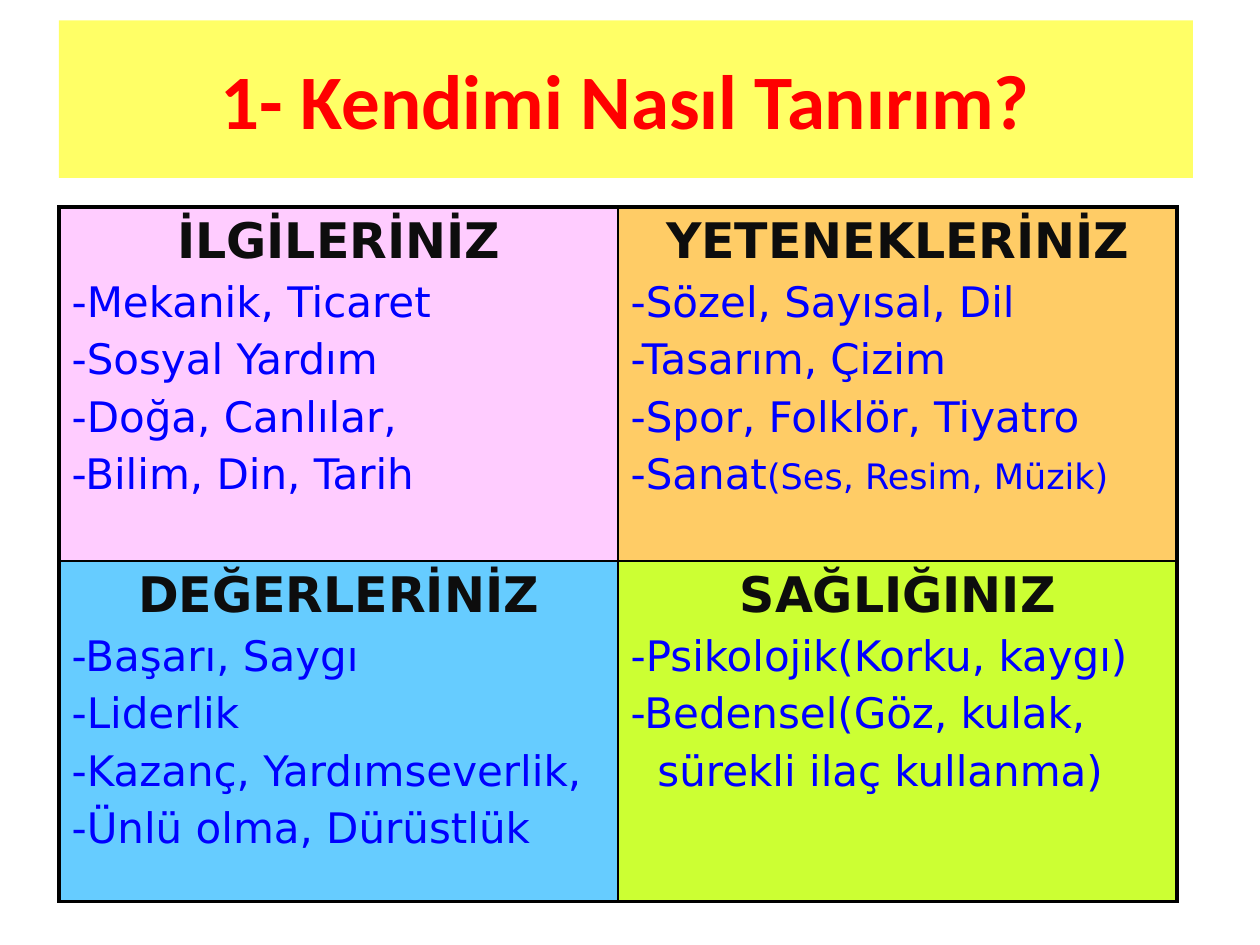
from lxml import etree
from pptx import Presentation
from pptx import util as u
from pptx.dml.color import RGBColor
from pptx.enum import shapes, text
from pptx.oxml.ns import qn

YELLOW = RGBColor(0xFF, 0xFF, 0x66)
RED = RGBColor(0xFF, 0x00, 0x00)
INK = RGBColor(0x0D, 0x0D, 0x0D)
BLUE = RGBColor(0x00, 0x00, 0xFF)
BLACK = RGBColor(0x00, 0x00, 0x00)
PINK = RGBColor(0xFF, 0xCC, 0xFF)
ORANGE = RGBColor(0xFF, 0xCC, 0x66)
SKY = RGBColor(0x66, 0xCC, 0xFF)
LIME = RGBColor(0xCC, 0xFF, 0x33)

LEFT = u.Cm(1.19)
OUTER, INNER = 2.25, 1
HANGING = "sürekli ilaç kullanma)"

TOPICS = [
    [
        ("İLGİLERİNİZ", PINK,
         ["-Mekanik, Ticaret", "-Sosyal Yardım", "-Doğa, Canlılar,", "-Bilim, Din, Tarih"]),
        ("YETENEKLERİNİZ", ORANGE,
         ["-Sözel, Sayısal, Dil", "-Tasarım, Çizim", "-Spor, Folklör, Tiyatro", "-Sanat"]),
    ],
    [
        ("DEĞERLERİNİZ", SKY,
         ["-Başarı, Saygı", "-Liderlik", "-Kazanç, Yardımseverlik,", "-Ünlü olma, Dürüstlük"]),
        ("SAĞLIĞINIZ", LIME,
         ["-Psikolojik(Korku, kaygı)", "-Bedensel(Göz, kulak,", HANGING]),
    ],
]
DETAILS = {"-Sanat": "(Ses, Resim, Müzik)"}


def add_run(p, content, size=24, color=BLUE, bold=False, font="DejaVu Sans"):
    r = p.add_run()
    r.text = content
    r.font.size = u.Pt(size)
    r.font.name = font
    r.font.bold = bold
    r.font.color.rgb = color


def add_title(s):
    sp = s.shapes.add_shape(shapes.MSO_SHAPE.RECTANGLE, LEFT, u.Cm(0.41), u.Cm(22.86), u.Cm(3.18))
    sp.shadow.inherit = False
    sp.fill.solid()
    sp.fill.fore_color.rgb = YELLOW
    sp.line.fill.background()
    tf = sp.text_frame
    tf.word_wrap = True
    tf.vertical_anchor = text.MSO_ANCHOR.MIDDLE
    p = tf.paragraphs[0]
    p.alignment = text.PP_ALIGN.CENTER
    add_run(p, "1- Kendimi Nasıl Tanırım?", size=44, color=RED, bold=True, font="Calibri")


def set_border(cell, side, width):
    tcPr = cell._tc.get_or_add_tcPr()
    ln = etree.SubElement(tcPr, qn(f"a:ln{side}"), w=str(u.Pt(width)))
    fill = etree.SubElement(ln, qn("a:solidFill"))
    etree.SubElement(fill, qn("a:srgbClr"), val=str(BLACK))


def fill_cell(cell, heading, color, items):
    cell.fill.solid()
    cell.fill.fore_color.rgb = color
    tf = cell.text_frame
    p = tf.paragraphs[0]
    p.alignment = text.PP_ALIGN.CENTER
    add_run(p, heading, size=28, color=INK, bold=True)
    for item in items:
        p = tf.add_paragraph()
        p.space_before = u.Pt(4.8)
        if item == HANGING:
            p._p.get_or_add_pPr().set("marL", str(u.Cm(0.54)))
        add_run(p, item)
        if item in DETAILS:
            add_run(p, DETAILS[item], size=20)


def add_topics(s):
    widths, heights = [u.Cm(11.27)] * 2, [u.Cm(7.14), u.Cm(6.86)]
    table = s.shapes.add_table(2, 2, LEFT, u.Cm(4.17), sum(widths), sum(heights)).table
    table.first_row = table.horz_banding = False
    for i in range(2):
        table.columns[i].width = widths[i]
        table.rows[i].height = heights[i]
    for i, row in enumerate(TOPICS):
        for j, topic in enumerate(row):
            cell = table.cell(i, j)
            outside = {"L": j == 0, "R": j == 1, "T": i == 0, "B": i == 1}
            for side, is_outer in outside.items():
                set_border(cell, side, OUTER if is_outer else INNER)
            fill_cell(cell, *topic)


def main():
    prs = Presentation()
    prs.slide_width, prs.slide_height = u.Cm(25.4), u.Cm(19.05)
    s = prs.slides.add_slide(prs.slide_layouts[6])
    add_title(s)
    add_topics(s)
    prs.save("out.pptx")


if __name__ == "__main__":
    main()
